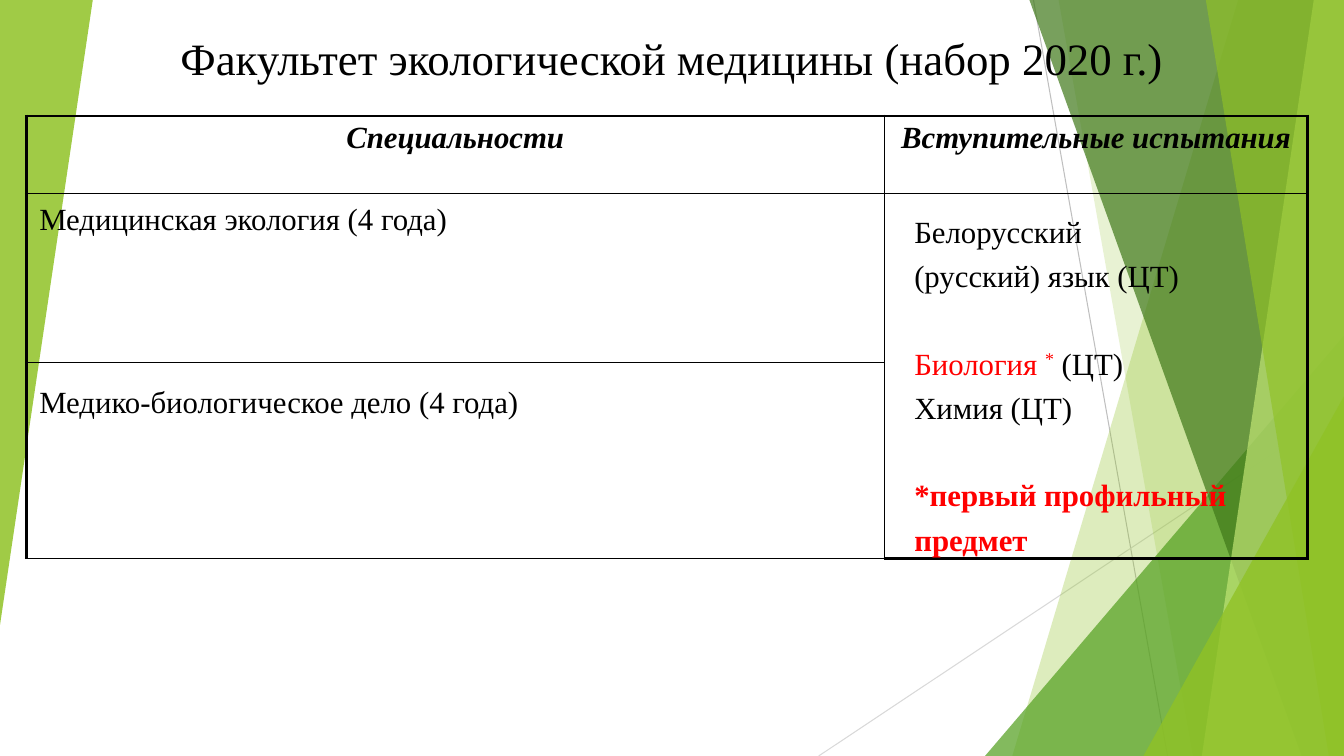
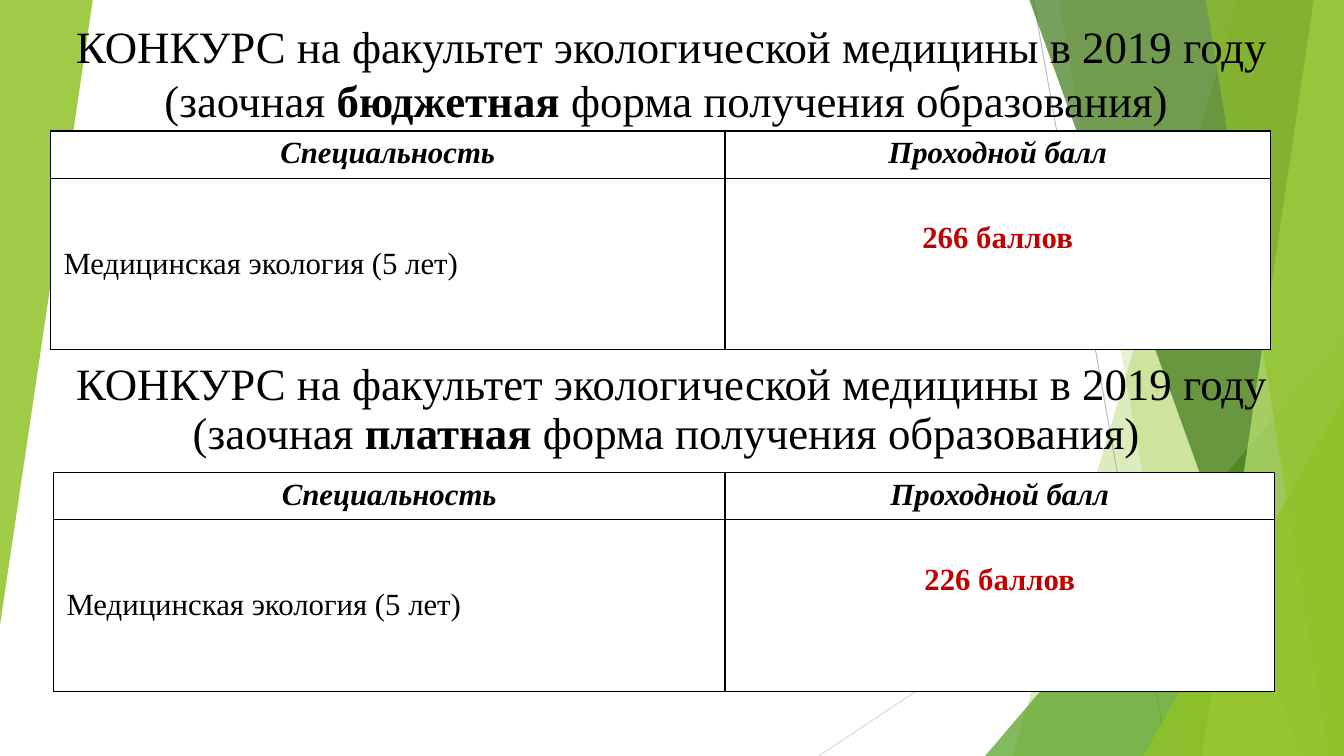
from pptx import Presentation
from pptx.dml.color import RGBColor as Rgb
from pptx.enum.shapes import MSO_CONNECTOR as Link, MSO_SHAPE as Kind
from pptx.enum.text import MSO_ANCHOR as Anchor, PP_ALIGN as Align
from pptx.oxml.ns import qn
from pptx.util import Inches, Pt
from lxml.etree import SubElement as Sub

WIDE, HIGH = 13.33, 7.5
FONT = "Times New Roman"
HUES = {
    "black": "000000", "white": "FFFFFF", "red": "FF0000", "score": "C00000",
    "lime": "90C226", "leaf": "54A021", "moss": "3F7819", "pale": "C0E474",
    "gray": "BFBFBF", "mist": "D9D9D9",
}
THIN, THICK = 1, 2.25
HEAD = {"bold": True, "italic": True}


def hue(name):
    return Rgb.from_string(HUES[name])


class Deck:
    def __init__(self):
        self.prs = Presentation()
        self.prs.slide_width = Inches(WIDE)
        self.prs.slide_height = Inches(HIGH)
        self.slide = None

    def page(self):
        """Start a slide with the shared faceted backdrop."""
        self.slide = self.prs.slides.add_slide(self.prs.slide_layouts[6])
        self.line((10.25, 0), (11.58, HIGH), "gray")
        self.line((WIDE, 4.03), (8.12, HIGH), "mist")
        self.facet(12.28, 10.04, "lime", 30)
        self.facet(10.5, 11.83, "lime", 20)
        self.wedge((9.77, 3.33, 3.56, 4.17), "leaf", 72)
        self.facet(10.21, 12.91, "moss", 70)
        self.facet(13.03, 11.92, "pale", 70)
        self.facet(11.96, 13.18, "lime", 65)
        self.wedge((11.34, 3.93, 1.99, 3.57), "lime", 80)
        self.wedge((0, 0, 0.92, 6.2), "lime", 85, 180)

    def line(self, start, end, tone):
        link = self.slide.shapes.add_connector(
            Link.STRAIGHT, *map(Inches, start + end))
        link.line.color.rgb = hue(tone)
        link.line.width = Pt(0.75)
        Sub(link.element.spPr, qn("a:effectLst"))

    def paint(self, shape, tone, alpha):
        """Give a flat fill with the opacity in percent and no outline."""
        shape.shadow.inherit = False
        shape.fill.solid()
        shape.fill.fore_color.rgb = hue(tone)
        shape.line.fill.background()
        color = shape.element.find(".//" + qn("a:srgbClr"))
        Sub(color, qn("a:alpha"), val=str(alpha * 1000))

    def facet(self, top, base, tone, alpha):
        """Fill from a slanted edge to the right side of the slide."""
        pen = self.slide.shapes.build_freeform(Inches(top), 0)
        ends = [(WIDE, 0), (WIDE, HIGH), (base, HIGH)]
        pen.add_line_segments([(Inches(x), Inches(y)) for x, y in ends])
        self.paint(pen.convert_to_shape(), tone, alpha)

    def wedge(self, box, tone, alpha, turn=0):
        shape = self.slide.shapes.add_shape(
            Kind.ISOSCELES_TRIANGLE, *map(Inches, box))
        shape.adjustments[0] = 1
        shape.rotation = turn
        self.paint(shape, tone, alpha)

    def put(self, para, parts, size, align=Align.LEFT):
        """Add (text, style) runs to a paragraph."""
        para.alignment = align
        for text, look in parts:
            run = para.add_run()
            run.text = text
            font = run.font
            font.name, font.size = FONT, Pt(size)
            font.bold = look.get("bold", False)
            font.italic = look.get("italic", False)
            font.color.rgb = hue(look.get("tone", "black"))
            if "base" in look:
                run._r.get_or_add_rPr().set("baseline", look["base"])

    def frame(self, box):
        text = self.slide.shapes.add_textbox(*map(Inches, box)).text_frame
        text.word_wrap = True
        return text

    def title(self, top, parts, space=1.0):
        text = self.frame((0, top, WIDE, 0.68))
        text.vertical_anchor = Anchor.BOTTOM
        para = text.paragraphs[0]
        para.line_spacing = space
        self.put(para, parts, 32, Align.CENTER)

    def stack(self, box, rows):
        """Stack lines given as (space before, runs)."""
        text = self.frame(box)
        for i, (gap, parts) in enumerate(rows):
            para = text.add_paragraph() if i else text.paragraphs[0]
            para.space_before = Pt(gap)
            self.put(para, parts, 22)

    def grid(self, left, top, cols, rows):
        table = self.slide.shapes.add_table(
            len(rows), len(cols), Inches(left), Inches(top),
            Inches(sum(cols)), Inches(sum(rows))).table
        table.first_row = table.horz_banding = False
        for col, wide in zip(table.columns, cols):
            col.width = Inches(wide)
        for row, high in zip(table.rows, rows):
            row.height = Inches(high)
        return table

    def cell(self, cell, text="", look=HEAD, align=Align.CENTER, inset=0.05,
             anchor=Anchor.TOP, fill=None, edges=(THIN,) * 4):
        """Fill one cell; edges are left, right, top and bottom widths."""
        cell.margin_left = cell.margin_right = Inches(0.13)
        cell.margin_top, cell.margin_bottom = Inches(inset), Inches(0.05)
        cell.vertical_anchor = anchor
        if text:
            self.put(cell.text_frame.paragraphs[0], [(text, look)], 22, align)
        props = cell._tc.get_or_add_tcPr()
        for side, wide in zip("LRTB", edges):
            edge = Sub(props, qn("a:ln" + side), w=str(Pt(wide)))
            paint = Sub(edge, qn("a:solidFill"))
            Sub(paint, qn("a:srgbClr"), val=HUES["black"])
        if fill:
            cell.fill.solid()
            cell.fill.fore_color.rgb = hue(fill)
        else:
            cell.fill.background()

    def scores(self, left, top, cols, score):
        """Draw a table with one course and its passing score."""
        table = self.grid(left, top, cols, (0.45, 1.7))
        self.cell(table.cell(0, 0), "Специальность", fill="white")
        self.cell(table.cell(0, 1), "Проходной балл", fill="white")
        self.cell(table.cell(1, 0), "Медицинская экология (5 лет)", {},
                  Align.LEFT, anchor=Anchor.MIDDLE, fill="white")
        self.cell(table.cell(1, 1), score, {"bold": True, "tone": "score"},
                  inset=0.43, fill="white")


def exams(deck):
    deck.page()
    deck.title(0.21, [("Факультет экологической медицины (набор 2020 г.)", {})])
    table = deck.grid(0.26, 1.15, (8.51, 4.2), (0.77, 1.68, 1.94))
    table.cell(1, 1).merge(table.cell(2, 1))
    deck.cell(table.cell(0, 0), "Специальности",
              edges=(THICK, THIN, THICK, THIN))
    deck.cell(table.cell(0, 1), "Вступительные испытания",
              edges=(THIN, THICK, THICK, THIN))
    courses = [("Медицинская экология (4 года)", 0.1),
               ("Медико-биологическое дело (4 года)", 0.23)]
    for row, (name, inset) in enumerate(courses, 1):
        deck.cell(table.cell(row, 0), name, {}, Align.LEFT, inset,
                  edges=(THICK, THIN, THIN, THIN))
        deck.cell(table.cell(row, 1), edges=(THIN, THICK, THIN, THICK))
    red, bold = {"tone": "red"}, {"tone": "red", "bold": True}
    near, far = 5.3, 36
    deck.stack((8.97, 2.06, 3.4, 3.74), [
        (0, [("Белорусский", {})]),
        (near, [("(русский) язык (ЦТ)", {})]),
        (far, [("Биология ", red), ("*", {**red, "base": "30000"}),
               (" (ЦТ)", {})]),
        (near, [("Химия (ЦТ)", {})]),
        (far, [("*первый профильный", bold)]),
        (near, [("предмет", bold)]),
    ])


def contest(deck):
    deck.page()
    blocks = [
        (0.62, "бюджетная", 1.0, (0.5, 1.3, (6.69, 5.41), "266 баллов")),
        (3.92, "платная", 0.9, (0.53, 4.69, (6.66, 5.45), "226 баллов")),
    ]
    for top, form, space, table in blocks:
        deck.title(top, [
            ("КОНКУРС на факультет экологической медицины в 2019 году (заочная ", {}),
            (form, {"bold": True}),
            (" форма получения образования) ", {}),
        ], space)
        deck.scores(*table)


def main():
    deck = Deck()
    exams(deck)
    contest(deck)
    deck.prs.save("out.pptx")


if __name__ == "__main__":
    main()
